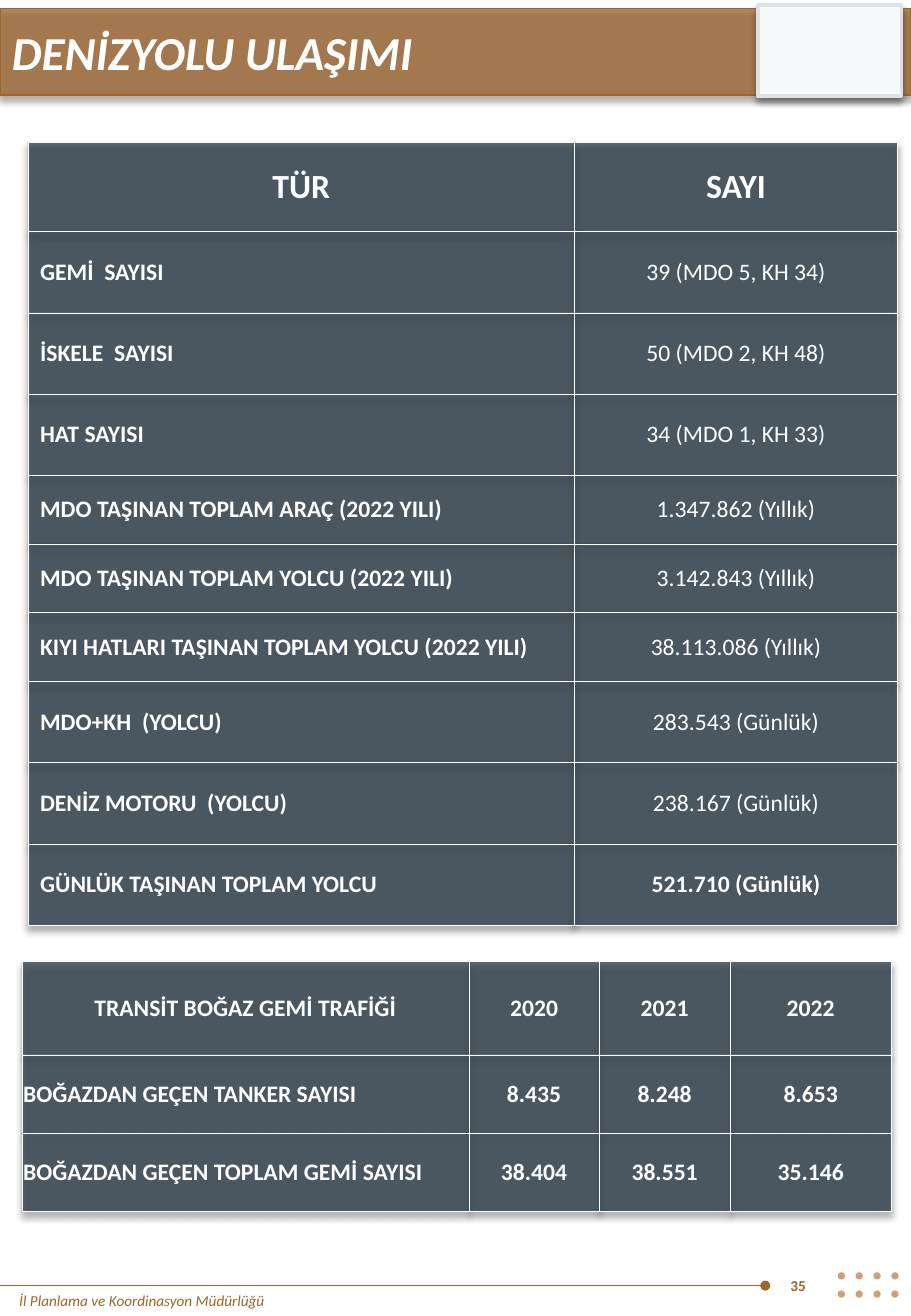
from lxml import etree
from pptx import Presentation
from pptx.dml.color import RGBColor
from pptx.enum.shapes import MSO_CONNECTOR, MSO_SHAPE
from pptx.enum.text import MSO_ANCHOR, PP_ALIGN
from pptx.oxml import parse_xml
from pptx.oxml.ns import qn
from pptx.util import Inches, Pt

RECTANGLE, OVAL = MSO_SHAPE.RECTANGLE, MSO_SHAPE.OVAL
STRAIGHT = MSO_CONNECTOR.STRAIGHT
TOP, MIDDLE = MSO_ANCHOR.TOP, MSO_ANCHOR.MIDDLE
LEFT, CENTER, JUSTIFY = PP_ALIGN.LEFT, PP_ALIGN.CENTER, PP_ALIGN.JUSTIFY

NAMESPACE = 'xmlns:a="http://schemas.openxmlformats.org/drawingml/2006/main"'
WIDTH, HEIGHT = 7.5, 10.83
COLUMNS, ROWS = 75, 108.3
COLORS = {
    "brown": "9E652E",
    "sand": "CDA077",
    "slate": "283845",
    "white": "FFFFFF",
    "panel": "F8F9FA",
    "panel_edge": "DEE2E6",
    "shadow": "000000",
}


def rgb(name):
    return RGBColor.from_string(COLORS[name])


def soft_shadow():
    return parse_xml(
        f'<a:effectLst {NAMESPACE}><a:outerShdw blurRad="{Pt(4)}" dist="{Pt(3)}" '
        f'dir="5400000" algn="t" rotWithShape="0"><a:srgbClr val="{COLORS["shadow"]}">'
        '<a:alpha val="40000"/></a:srgbClr></a:outerShdw></a:effectLst>')


def fill_solid(fill, color, holder, opacity=100):
    """Fill with a colour; holder is the XML element that carries the fill."""
    fill.solid()
    fill.fore_color.rgb = rgb(color)
    if opacity < 100:
        color_element = holder.find(qn("a:solidFill")).find(qn("a:srgbClr"))
        etree.SubElement(color_element, qn("a:alpha")).set("val", str(opacity * 1000))


def write(frame, text, size=14, color="white", bold=False, italic=False,
          align=LEFT, anchor=TOP):
    frame.word_wrap = True
    frame.vertical_anchor = anchor
    para = frame.paragraphs[0]
    para.alignment = align
    span = para.add_run()
    span.text = text
    font = span.font
    font.name, font.size = "Calibri", Pt(size)
    font.bold, font.italic = bold, italic
    font.color.rgb = rgb(color)


class Page:
    """A slide whose lengths are counted in grid columns and rows."""

    def __init__(self, deck):
        self.slide = deck.slides.add_slide(deck.slide_layouts[6])
        self.shapes = self.slide.shapes

    def across(self, columns):
        return Inches(columns * WIDTH / COLUMNS)

    def down(self, rows):
        return Inches(rows * HEIGHT / ROWS)

    def area(self, left, top, width, height):
        return self.across(left), self.down(top), self.across(width), self.down(height)

    def shape(self, kind, place, color, opacity=100, edge=None, edge_width=1, shadow=False):
        shape = self.shapes.add_shape(kind, *self.area(*place))
        shape.shadow.inherit = False
        properties = shape.fill._xPr
        fill_solid(shape.fill, color, properties, opacity)
        if edge:
            shape.line.color.rgb = rgb(edge)
            shape.line.width = Pt(edge_width)
        else:
            shape.line.fill.background()
        if shadow:
            properties.replace(properties.find(qn("a:effectLst")), soft_shadow())

    def line(self, start, end, color, width):
        line = self.shapes.add_connector(
            STRAIGHT, self.across(start[0]), self.down(start[1]),
            self.across(end[0]), self.down(end[1]))
        line.line.color.rgb = rgb(color)
        line.line.width = Pt(width)
        outline = line.line._get_or_add_ln()
        etree.SubElement(outline, qn("a:headEnd")).set("type", "oval")
        etree.SubElement(outline.getparent(), qn("a:effectLst"))

    def text(self, place, text, **style):
        box = self.shapes.add_textbox(*self.area(*place))
        write(box.text_frame, text, **style)

    def table(self, left, top, widths, heights, rows, style_of, margins=None):
        """Draw a bordered table; style_of(row, column) gives a cell's text format."""
        frame = self.shapes.add_table(
            len(rows), len(widths), *self.area(left, top, sum(widths), sum(heights)))
        table = frame.table
        table.first_row = table.horz_banding = False
        table._tbl.tblPr.insert(0, soft_shadow())
        for column, width in zip(table.columns, widths):
            column.width = self.across(width)
        for row, height in zip(table.rows, heights):
            row.height = self.down(height)
        for r, texts in enumerate(rows):
            for c, text in enumerate(texts):
                self.cell(table.cell(r, c), text, margins, style_of(r, c))

    def cell(self, cell, text, margins, style):
        if margins:
            (cell.margin_left, cell.margin_top,
             cell.margin_right, cell.margin_bottom) = map(Inches, margins)
        write(cell.text_frame, text, **style)
        cell.vertical_anchor = MIDDLE
        properties = cell._tc.get_or_add_tcPr()
        fill_solid(cell.fill, "slate", properties, opacity=75)
        for position, side in enumerate("LRTB"):
            properties.insert(position, parse_xml(
                f'<a:ln{side} {NAMESPACE} w="{Pt(0.25)}"><a:solidFill>'
                f'<a:srgbClr val="{COLORS["white"]}"/></a:solidFill></a:ln{side}>'))


FERRY_ROWS = [
    ("TÜR", "SAYI"),
    ("GEMİ  SAYISI", "39 (MDO 5, KH 34)"),
    ("İSKELE  SAYISI", "50 (MDO 2, KH 48)"),
    ("HAT SAYISI", "34 (MDO 1, KH 33)"),
    ("MDO TAŞINAN TOPLAM ARAÇ (2022 YILI)", "1.347.862 (Yıllık)"),
    ("MDO TAŞINAN TOPLAM YOLCU (2022 YILI)", "3.142.843 (Yıllık)"),
    ("KIYI HATLARI TAŞINAN TOPLAM YOLCU (2022 YILI)", "38.113.086 (Yıllık)"),
    ("MDO+KH  (YOLCU)", "283.543 (Günlük)"),
    ("DENİZ MOTORU  (YOLCU)", "238.167 (Günlük)"),
    ("GÜNLÜK TAŞINAN TOPLAM YOLCU", "521.710 (Günlük)"),
]
STRAIT_ROWS = [
    ("TRANSİT BOĞAZ GEMİ TRAFİĞİ", "2020", "2021", "2022"),
    ("BOĞAZDAN GEÇEN TANKER SAYISI", "8.435", "8.248", "8.653"),
    ("BOĞAZDAN GEÇEN TOPLAM GEMİ SAYISI", "38.404", "38.551", "35.146"),
]


def ferry_style(row, column):
    last = len(FERRY_ROWS) - 1
    return {"size": 14 if row else 20,
            "bold": column == 0 or row in (0, last),
            "align": LEFT if row and column == 0 else CENTER}


def strait_style(row, column):
    return {"bold": True, "align": JUSTIFY if row and column == 0 else CENTER}


def main():
    deck = Presentation()
    deck.slide_width, deck.slide_height = Inches(WIDTH), Inches(HEIGHT)
    page = Page(deck)

    page.shape(RECTANGLE, (0, 0.7, COLUMNS, 7.1), "brown", 75, "brown", shadow=True)
    page.shape(RECTANGLE, (62.4, 0.4, 11.8, 7.5), "panel", edge="panel_edge",
               edge_width=2, shadow=True)
    page.text((0, 1.4, COLUMNS, 5.7), "DENİZYOLU ULAŞIMI", size=28, bold=True, italic=True)

    page.table(2.3, 11.7, [45, 26.6], [7.35] + [6.69] * 3 + [5.65] * 3 + [6.69] * 3,
               FERRY_ROWS, ferry_style)
    page.table(1.8, 79.1, [36.8, 10.75, 10.75, 13.3], [7.7, 6.45, 6.45],
               STRAIT_ROWS, strait_style, margins=(0.01, 0.01, 0.01, 0))

    page.line((63, 105.8), (0, 105.8), "brown", 0.5)
    for row in range(2):
        for column in range(4):
            page.shape(OVAL, (68.97 + 1.47 * column, 104.7 + 1.5 * row, 0.6, 0.6), "sand")
    page.text((0.6, 105.8, 46.9, 2.5), "İl Planlama ve Koordinasyon Müdürlüğü",
              size=9, color="brown", italic=True)
    page.text((64.1, 103.7, 5, 4.2), "35", size=9, color="brown", bold=True, anchor=MIDDLE)

    deck.save("out.pptx")


if __name__ == "__main__":
    main()
